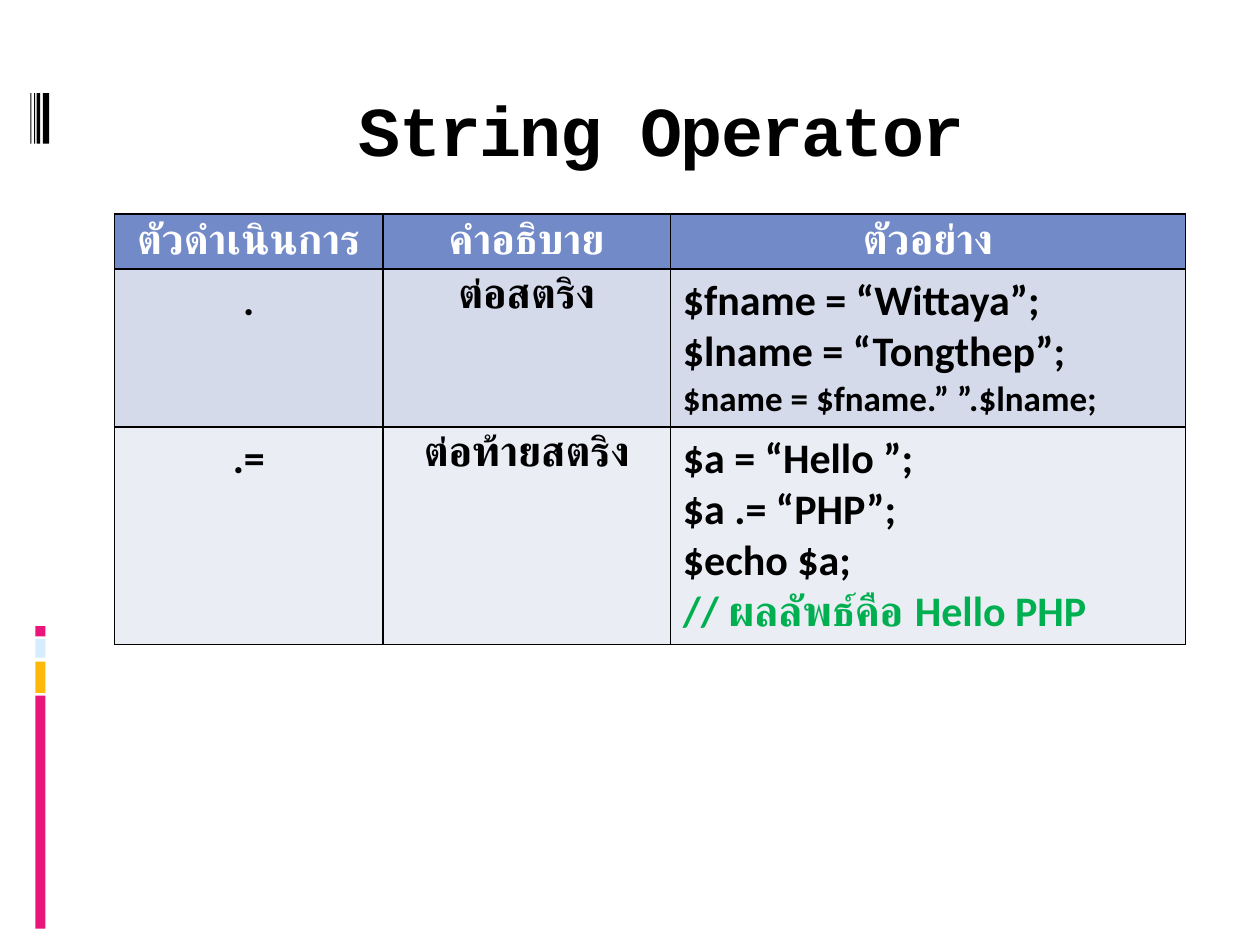
from dataclasses import dataclass

import pptx
import pptx.util
from lxml import etree
from pptx.dml.color import RGBColor
from pptx.enum.shapes import MSO_SHAPE
from pptx.enum.text import MSO_ANCHOR, PP_ALIGN
from pptx.oxml.ns import qn
from pptx.util import Inches, Pt


@dataclass(frozen=True)
class Theme:
    black: str = "000000"
    white: str = "FFFFFF"
    pink: str = "EA157A"
    amber: str = "FEB80A"
    ice: str = "D6ECFF"
    header: str = "738AC8"
    bands: tuple = ("D5DAEB", "EBEDF5")
    comment: str = "00B050"
    title_font: str = "Courier New"
    body_font: str = "Calibri"
    title_size: int = 40
    body_size: int = 24
    small_size: int = 20


THEME = Theme()

HEADINGS = ["ตัวดำเนินการ", "คำอธิบาย", "ตัวอย่าง"]
OPERATORS = [
    (".", "ต่อสตริง",
     ["$fname = “Wittaya”;", "$lname = “Tongthep”;", "$name = $fname.” ”.$lname;"]),
    (".=", "ต่อท้ายสตริง",
     ["$a = “Hello ”;", "$a .= “PHP”;", "$echo $a;", "// ผลลัพธ์คือ Hello PHP"]),
]
COLUMN_WIDTHS = [2.13, 2.28, 4.09]
ROW_HEIGHT = 0.41

COLOR_STRIPS = [  # top, height, colour
    (5.52, 1.85, THEME.pink),
    (5.25, 0.25, THEME.amber),
    (5.07, 0.15, THEME.ice),
    (4.97, 0.08, THEME.pink),
]
BARCODE_STRIPS = [(0.34, 0.05), (0.29, 0.03), (0.27, 0.01), (0.24, 0.01)]  # left, width


def add_strip(slide, left, top, width, height, color):
    strip = slide.shapes.add_shape(
        MSO_SHAPE.RECTANGLE, Inches(left), Inches(top), Inches(width), Inches(height))
    strip.shadow.inherit = False
    strip.fill.solid()
    strip.fill.fore_color.rgb = RGBColor.from_string(color)
    strip.line.fill.background()


def style_run(run, font, size, color):
    run.font.name = font
    run.font.size = Pt(size)
    run.font.bold = True
    run.font.color.rgb = RGBColor.from_string(color)


def set_title(slide, text):
    title = slide.shapes.title
    title.left, title.top = Inches(1), Inches(0.56)
    title.width, title.height = Inches(8.5), Inches(1)
    title.text_frame.text = text
    title.text_frame.vertical_anchor = MSO_ANCHOR.MIDDLE
    heading = title.text_frame.paragraphs[0]
    heading.alignment = PP_ALIGN.CENTER
    heading.line_spacing = 0.9
    run = heading.runs[0]
    style_run(run, THEME.title_font, THEME.title_size, THEME.black)
    run.font._element.set("spc", "-100")


def outline_cell(cell):
    """Draw a one-point border on all four sides, ahead of the cell fill."""
    properties = cell._tc.get_or_add_tcPr()
    for index, side in enumerate(("lnL", "lnR", "lnT", "lnB")):
        border = etree.Element(qn(f"a:{side}"), w=str(Pt(1)))
        fill = etree.SubElement(border, qn("a:solidFill"))
        etree.SubElement(fill, qn("a:srgbClr"), val=THEME.black)
        properties.insert(index, border)


def fill_cell(cell, lines, background, color, alignment):
    cell.fill.solid()
    cell.fill.fore_color.rgb = RGBColor.from_string(background)
    outline_cell(cell)
    cell.text_frame.text = "\n".join(lines)
    for line in cell.text_frame.paragraphs:
        line.alignment = alignment
        size = THEME.small_size if line.text.startswith("$name") else THEME.body_size
        line_color = THEME.comment if line.text.startswith("//") else color
        style_run(line.runs[0], THEME.body_font, size, line_color)


def add_operator_table(slide):
    row_count = len(OPERATORS) + 1
    table = slide.shapes.add_table(
        row_count, len(HEADINGS), Inches(0.91), Inches(1.7),
        Inches(sum(COLUMN_WIDTHS)), Inches(ROW_HEIGHT * row_count)).table
    for column, width in zip(table.columns, COLUMN_WIDTHS):
        column.width = Inches(width)
    for column, heading in enumerate(HEADINGS):
        fill_cell(table.cell(0, column), [heading], THEME.header, THEME.white,
                  PP_ALIGN.CENTER)
    for row, (operator, meaning, example) in enumerate(OPERATORS, start=1):
        band = THEME.bands[row - 1]
        for column, label in enumerate((operator, meaning)):
            fill_cell(table.cell(row, column), [label], band, THEME.black,
                      PP_ALIGN.CENTER)
        fill_cell(table.cell(row, 2), example, band, THEME.black, PP_ALIGN.LEFT)


def main():
    deck = pptx.Presentation()
    deck.slide_width, deck.slide_height = Inches(10), Inches(7.5)
    slide = deck.slides.add_slide(deck.slide_layouts[5])
    for top, height, color in COLOR_STRIPS:
        add_strip(slide, 0.28, top, 0.08, height, color)
    for left, width in BARCODE_STRIPS:
        add_strip(slide, left, 0.74, width, 0.4, THEME.black)
    set_title(slide, "String Operator")
    add_operator_table(slide)
    deck.save("out.pptx")


if __name__ == "__main__":
    main()
